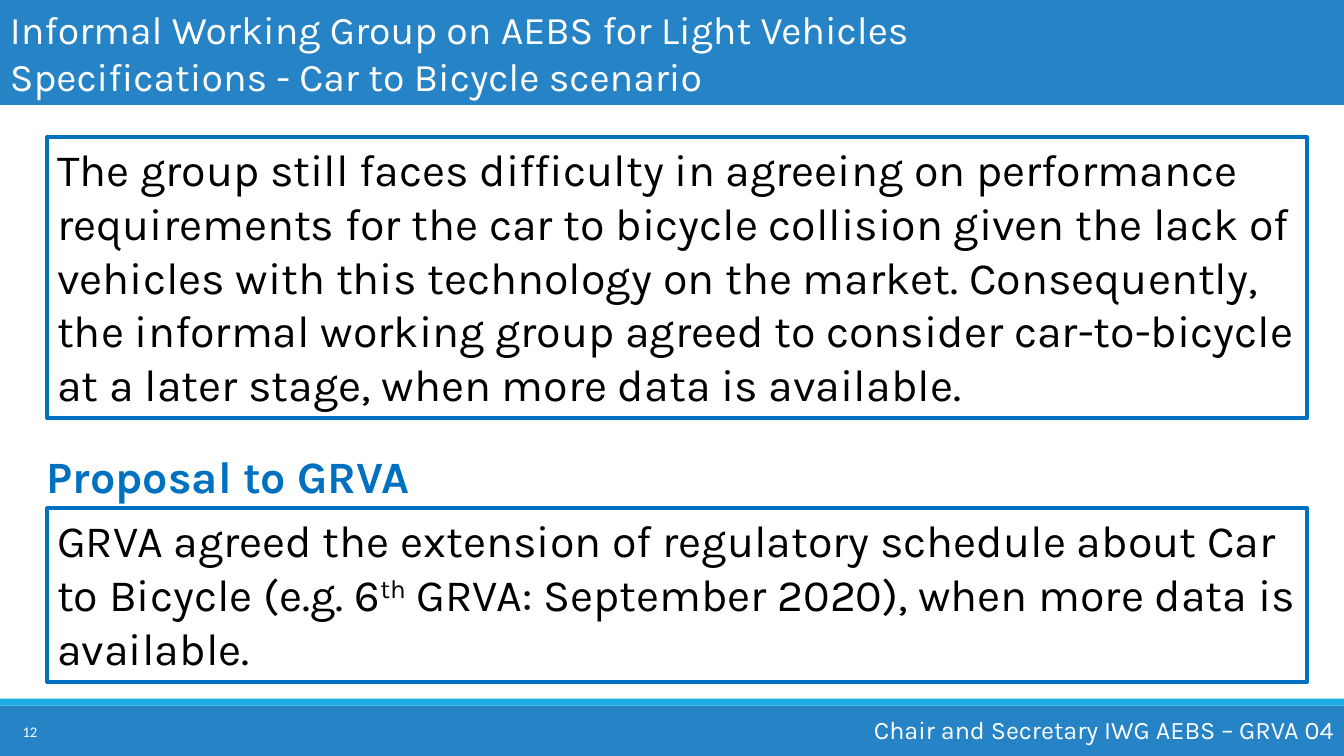
from dataclasses import dataclass

from pptx import Presentation
from pptx.dml.color import RGBColor
from pptx.enum.shapes import MSO_SHAPE
from pptx.enum.text import MSO_ANCHOR, PP_ALIGN
from pptx.util import Pt

RECT = MSO_SHAPE.RECTANGLE
TOP, MIDDLE = MSO_ANCHOR.TOP, MSO_ANCHOR.MIDDLE
LEFT, RIGHT = PP_ALIGN.LEFT, PP_ALIGN.RIGHT


@dataclass(frozen=True)
class Theme:
    blue: str = "2683C6"
    cyan: str = "1CADE4"
    edge: str = "0070C0"
    white: str = "FFFFFF"
    black: str = "000000"
    font: str = "Karla"
    plain: str = "Calibri"
    body: float = 32
    title: float = 28
    foot: float = 18
    page: float = 10.5


THEME = Theme()
WIDE, HIGH = 960, 540


def apply(target, values):
    for name, value in values.items():
        setattr(target, name, value)


def add_rect(slide, box, fill=None, edge=None, weight=0):
    rect = slide.shapes.add_shape(RECT, *map(Pt, box))
    rect.shadow.inherit = False
    if fill:
        rect.fill.solid()
        rect.fill.fore_color.rgb = RGBColor.from_string(fill)
    else:
        rect.fill.background()
    if edge:
        rect.line.color.rgb = RGBColor.from_string(edge)
        rect.line.width = Pt(weight)
    else:
        rect.line.fill.background()
    return rect


def add_label(slide, box):
    return slide.shapes.add_textbox(*map(Pt, box))


def write(shape, lines, size, color, font=THEME.font, bold=False,
          align=LEFT, anchor=TOP):
    frame = shape.text_frame
    apply(frame, {"word_wrap": True, "vertical_anchor": anchor})
    style = {"name": font, "size": Pt(size), "bold": bold}
    for index, line in enumerate(lines):
        para = frame.add_paragraph() if index else frame.paragraphs[0]
        para.alignment = align
        for place, text in enumerate(line):
            run = para.add_run()
            run.text = text
            apply(run.font, style)
            run.font.color.rgb = RGBColor.from_string(color)
            if place % 2:
                run._r.get_or_add_rPr().set("baseline", "30000")


def add_panel(slide, top, height, weight, line):
    panel = add_rect(slide, (33.75, top, 900, height), None, THEME.edge, weight)
    write(panel, [line], THEME.body, THEME.black)


def add_footer(slide):
    add_rect(slide, (0, 504, WIDE, 36), THEME.blue)
    add_rect(slide, (0, 499, WIDE, 5), THEME.cyan)
    page = add_label(slide, (0, 508.5, 33.75, 28.75))
    write(page, [["12"]], THEME.page, THEME.white, THEME.plain,
          align=RIGHT, anchor=MIDDLE)
    credit = add_label(slide, (586, 507, 374, 29))
    write(credit, [["Chair and Secretary IWG AEBS – GRVA 04"]],
          THEME.foot, THEME.white, align=RIGHT)


def main():
    deck = Presentation()
    apply(deck, {"slide_width": Pt(WIDE), "slide_height": Pt(HIGH)})
    slide = deck.slides.add_slide(deck.slide_layouts[6])
    add_footer(slide)

    header = add_rect(slide, (0, 0, WIDE, 75), THEME.blue)
    write(header, [["Informal Working Group on AEBS for Light Vehicles"],
                   ["Specifications - Car to Bicycle scenario"]],
          THEME.title, THEME.white)

    add_panel(slide, 97.75, 201, 2.5, [
        "The group still faces difficulty in agreeing on performance "
        "requirements for the car to bicycle collision given the lack of "
        "vehicles with this technology on the market. Consequently, the "
        "informal working group agreed to consider car-to-bicycle at a "
        "later stage, when more data is available."])

    heading = add_label(slide, (26.25, 317, 306, 46))
    write(heading, [["Proposal to GRVA"]], THEME.body, THEME.edge, bold=True)

    add_panel(slide, 363, 124, 2.75, [
        "GRVA agreed the extension of regulatory schedule about Car to "
        "Bicycle (e.g. 6", "th",
        " GRVA: September 2020), when more data is available."])

    deck.save("out.pptx")


if __name__ == "__main__":
    main()
